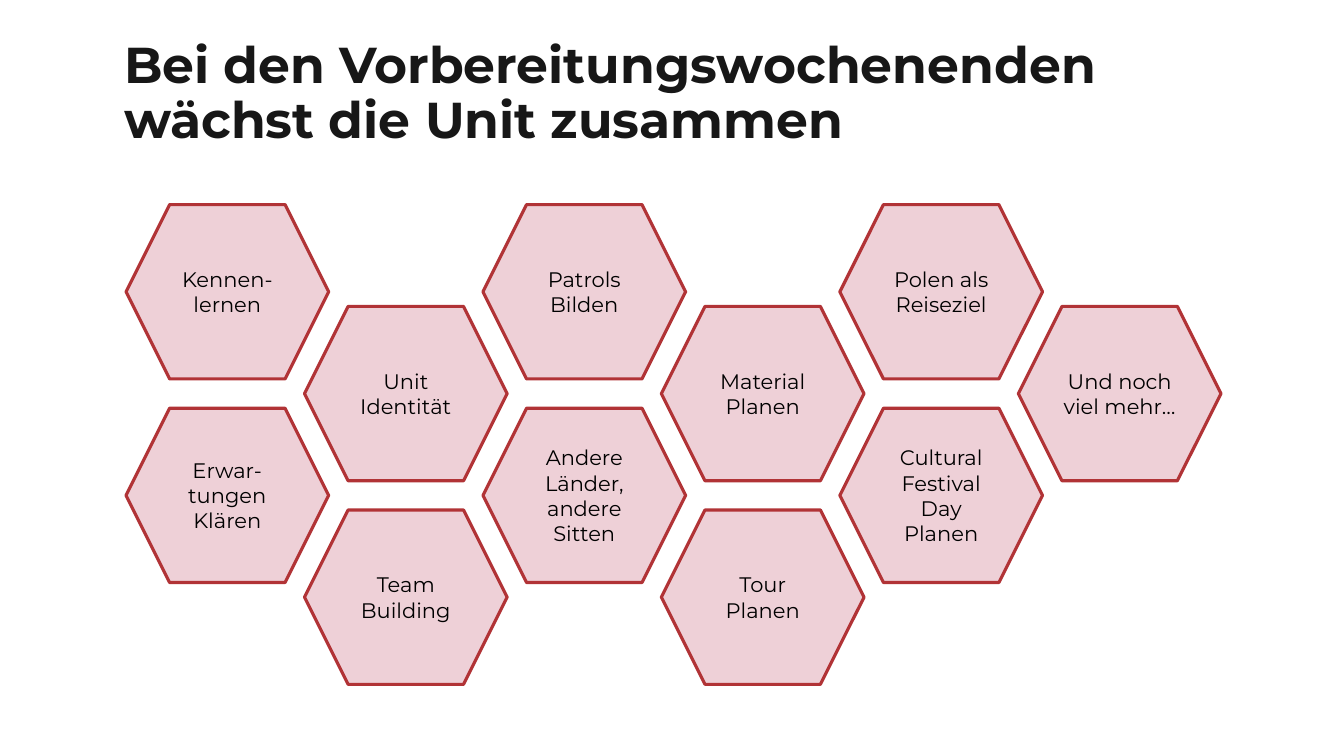
"""Build a slide with a honeycomb of topics for the preparation weekends."""
import pptx
import pptx.dml.color
import pptx.enum.shapes
import pptx.enum.text
import pptx.util

Inches = pptx.util.Inches
Pt = pptx.util.Pt
RGB = pptx.dml.color.RGBColor.from_string
ALIGN = pptx.enum.text.PP_ALIGN
MIDDLE = pptx.enum.text.MSO_ANCHOR.MIDDLE

THEME = {
    "title": {"name": "Montserrat", "size": Pt(36), "bold": True},
    "title_color": RGB("171717"),
    "topic": {"name": "Montserrat", "size": Pt(15), "bold": False},
    "topic_color": RGB("000000"),
    "cell_fill": RGB("EED0D7"),
    "cell_line": RGB("B13336"),
    "cell_line_width": Pt(2.25),
}


def style_text(paragraph, role, alignment):
    """Apply the theme font of a role to a paragraph."""
    paragraph.alignment = alignment
    for attribute, value in THEME[role].items():
        setattr(paragraph.font, attribute, value)
    paragraph.font.color.rgb = THEME[role + "_color"]


deck = pptx.Presentation()
deck.slide_width = Inches(13.33)
deck.slide_height = Inches(7.5)
slide = deck.slides.add_slide(deck.slide_layouts[5])

title = slide.shapes.title
title_place = {"left": 1.23, "top": 0.4, "width": 11.18, "height": 1.08}
for side, length in title_place.items():
    setattr(title, side, Inches(length))
title_frame = title.text_frame
title_format = {
    "margin_left": 0, "margin_top": 0, "margin_right": 0, "margin_bottom": 0,
    "vertical_anchor": MIDDLE, "word_wrap": True,
    "auto_size": pptx.enum.text.MSO_AUTO_SIZE.NONE,
}
for attribute, value in title_format.items():
    setattr(title_frame, attribute, value)
title_frame.text = "Bei den Vorbereitungswochenenden wächst die Unit zusammen"
title_frame.paragraphs[0].line_spacing = 0.9
style_text(title_frame.paragraphs[0], "title", ALIGN.LEFT)

comb_left, comb_top = 1.25, 2.03
column_step, half_row_step = 1.77, 1.01
cell_width, cell_height = 2.01, 1.73
topic_columns = [
    ["Kennen-\nlernen", "Erwar-tungen Klären"],
    ["Unit Identität", "Team Building"],
    ["Patrols Bilden", "Andere Länder, andere Sitten"],
    ["Material Planen", "Tour Planen"],
    ["Polen als Reiseziel", "Cultural Festival\nDay\nPlanen"],
    ["Und noch viel mehr…"],
]

for column, topics in enumerate(topic_columns):
    for row, topic in enumerate(topics):
        half_rows = 2 * row + column % 2
        cell = slide.shapes.add_shape(
            pptx.enum.shapes.MSO_SHAPE.HEXAGON,
            Inches(comb_left + column * column_step),
            Inches(comb_top + half_rows * half_row_step),
            Inches(cell_width), Inches(cell_height))
        cell.shadow.inherit = False
        cell.fill.solid()
        cell.fill.fore_color.rgb = THEME["cell_fill"]
        cell.line.color.rgb = THEME["cell_line"]
        cell.line.width = THEME["cell_line_width"]
        cell.text_frame.word_wrap = True
        cell.text_frame.vertical_anchor = MIDDLE
        cell.text_frame.text = topic
        for paragraph in cell.text_frame.paragraphs:
            style_text(paragraph, "topic", ALIGN.CENTER)

deck.save("out.pptx")
